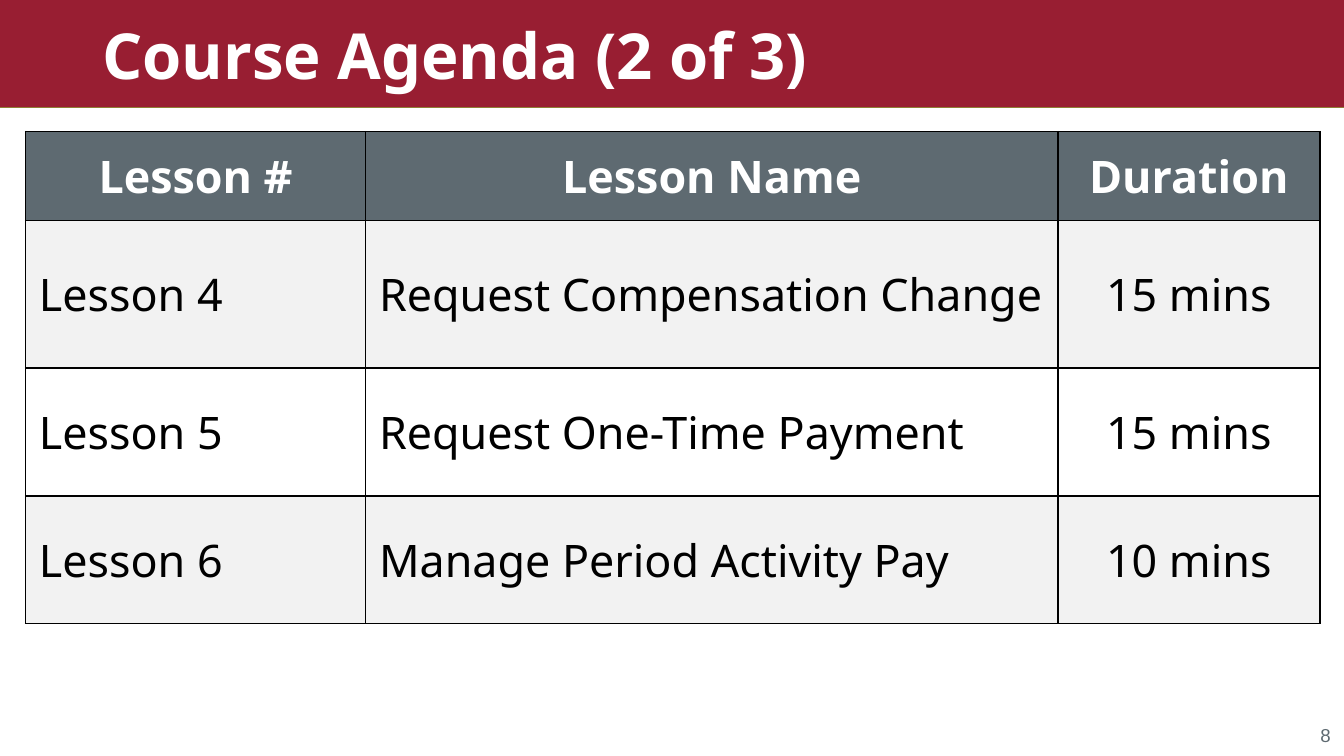
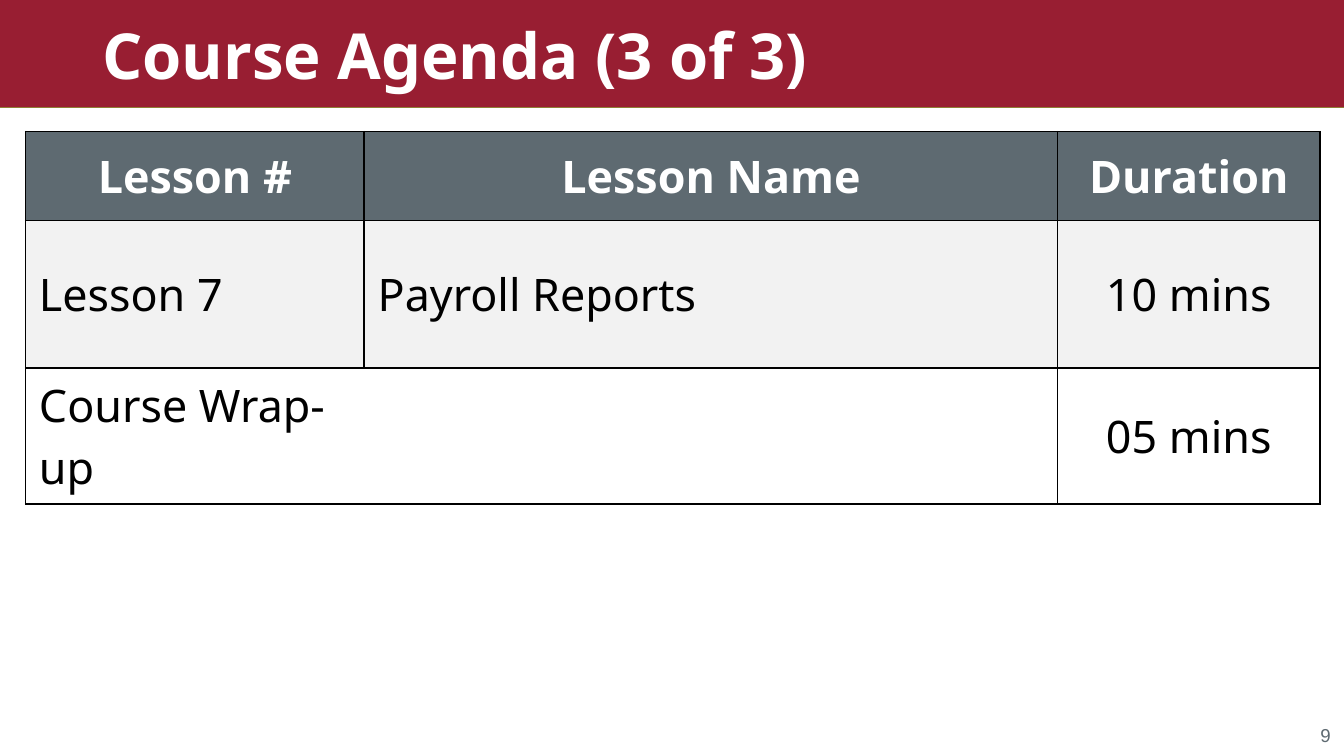
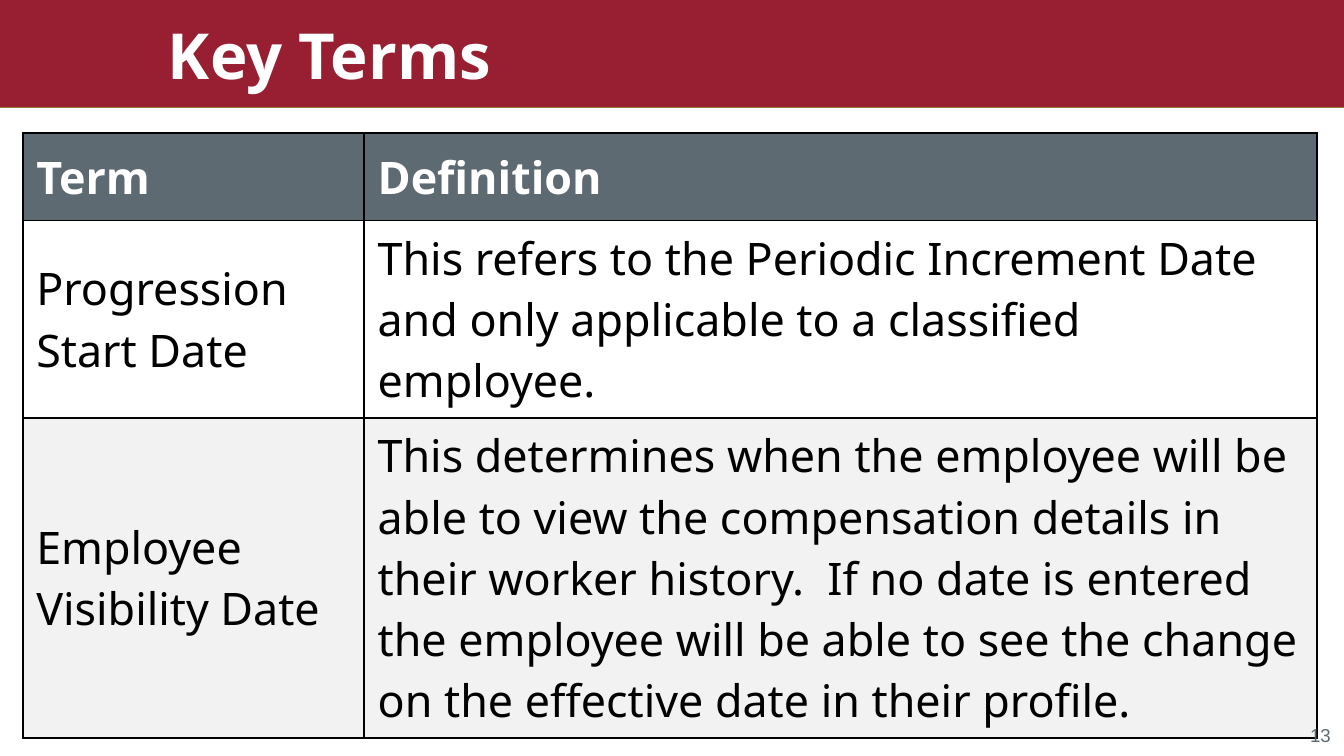
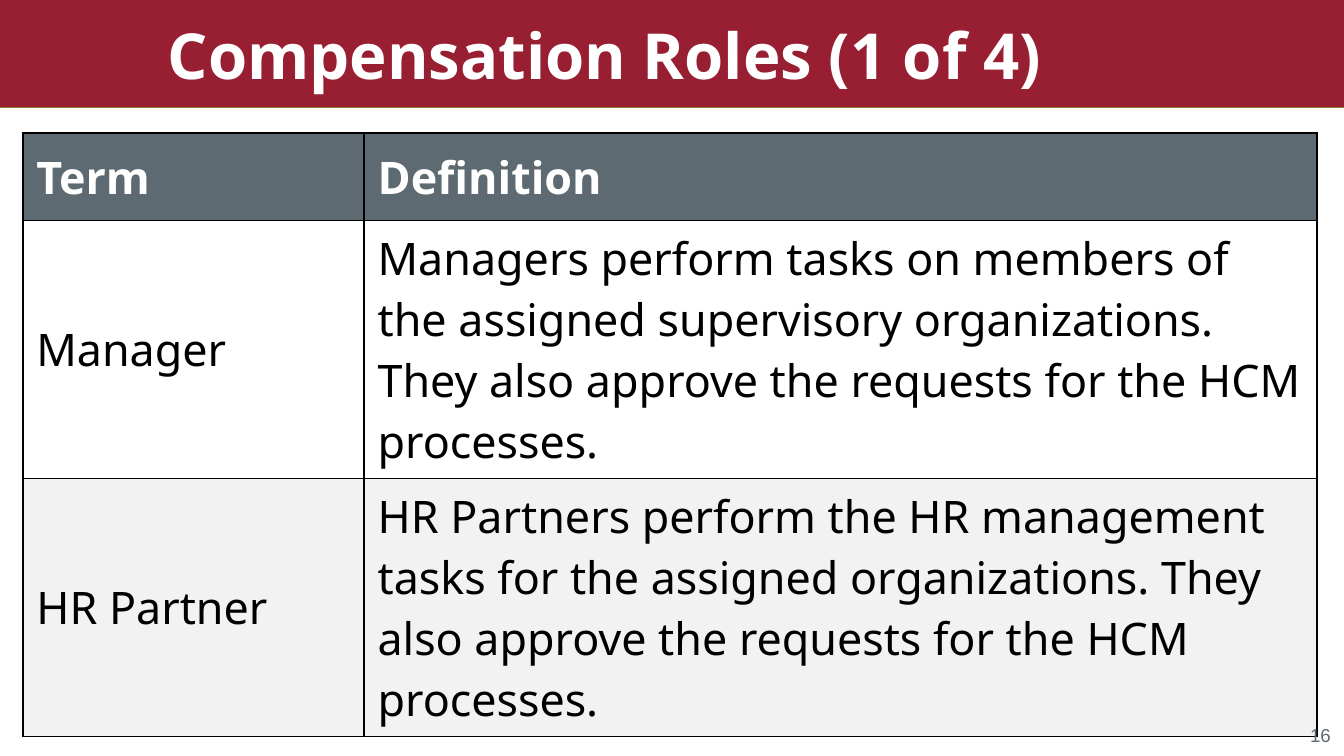
from lxml import etree
from pptx import Presentation
from pptx.dml.color import RGBColor
from pptx.enum.shapes import MSO_CONNECTOR, MSO_SHAPE
from pptx.enum.text import MSO_ANCHOR, PP_ALIGN
from pptx.oxml.ns import qn
from pptx.util import Inches, Pt

RECTANGLE = MSO_SHAPE.RECTANGLE
STRAIGHT = MSO_CONNECTOR.STRAIGHT
MIDDLE, BOTTOM = MSO_ANCHOR.MIDDLE, MSO_ANCHOR.BOTTOM
LEFT, CENTER, RIGHT = PP_ALIGN.LEFT, PP_ALIGN.CENTER, PP_ALIGN.RIGHT

# Shared colours and fonts
CRIMSON = RGBColor(0x98, 0x1E, 0x32)
GOLD = RGBColor(0x8F, 0x7E, 0x35)
SLATE = RGBColor(0x5E, 0x6A, 0x71)
LIGHT_GRAY = RGBColor(0xF2, 0xF2, 0xF2)
WHITE = RGBColor(0xFF, 0xFF, 0xFF)
BLACK = RGBColor(0x00, 0x00, 0x00)
MAIN_FONT = "Noto Sans"
NUMBER_FONT = "Arial"

# Shared sizes, on a 16:9 slide
WIDTH = Inches(10)
HEIGHT = WIDTH * 9 // 16
BAND_HEIGHT = Inches(0.8)
TITLE_TOP, TITLE_HEIGHT, TITLE_INSET = Inches(0.13), Inches(0.62), Inches(0.5)
NUMBER_WIDTH, NUMBER_HEIGHT, NUMBER_TOP = Inches(1.36), Inches(0.39), Inches(5.21)

# Table kinds: title place, table place, column alignment, body row fills
AGENDA = {
    "title": (0.26, 9.67), "table": (0.19, 0.98),
    "header_align": [CENTER, CENTER, CENTER], "body_align": [LEFT, LEFT, CENTER],
    "bands": [LIGHT_GRAY, WHITE], "header": ["Lesson #", "Lesson Name", "Duration"],
}
TERMS = {
    "title": (0.75, 9.06), "table": (0.17, 0.99),
    "header_align": [LEFT, LEFT], "body_align": [LEFT, LEFT],
    "bands": [WHITE, LIGHT_GRAY], "header": ["Term", "Definition"],
}

# Slides: kind, title, number, column widths, row heights, body rows
SLIDES = [
    (AGENDA, "Course Agenda (2 of 3)", "8", [2.53, 5.15, 1.95], [0.66, 1.1, 0.95, 0.95], [
        ["Lesson 4", "Request Compensation Change", "15 mins"],
        ["Lesson 5", "Request One-Time Payment", "15 mins"],
        ["Lesson 6", "Manage Period Activity Pay", "10 mins"],
    ]),
    (AGENDA, "Course Agenda (3 of 3)", "9", [2.52, 5.16, 1.95], [0.66, 1.1, 1.01], [
        ["Lesson 7", "Payroll Reports", "10 mins"],
        ["Course Wrap-up", "", "05 mins"],
    ]),
    (TERMS, "Key Terms", "13", [2.54, 7.09], [0.65, 1.47, 2.38], [
        ["Progression Start Date",
         "This refers to the Periodic Increment Date and only applicable to a "
         "classified employee."],
        ["Employee Visibility Date",
         "This determines when the employee will be able to view the compensation "
         "details in their worker history.  If no date is entered the employee will "
         "be able to see the change on the effective date in their profile."],
    ]),
    (TERMS, "Compensation Roles (1 of 4)", "16", [2.54, 7.09], [0.65, 1.92, 1.92], [
        ["Manager",
         "Managers perform tasks on members of the assigned supervisory "
         "organizations. They also approve the requests for the HCM processes."],
        ["HR Partner",
         "HR Partners perform the HR management tasks for the assigned "
         "organizations. They also approve the requests for the HCM processes."],
    ]),
]


def write_text(text_frame, text, size, color, align=LEFT, bold=False, font=MAIN_FONT):
    paragraph = text_frame.paragraphs[0]
    paragraph.alignment = align
    run = paragraph.add_run()
    run.text = text
    run.font.name = font
    run.font.size = Pt(size)
    run.font.bold = bold
    run.font.color.rgb = color
    return paragraph


def set_borders(cell, open_sides):
    properties = cell._tc.get_or_add_tcPr()
    for position, side in enumerate(["lnL", "lnR", "lnT", "lnB"]):
        line = etree.Element(qn("a:" + side), w=str(Pt(1)))
        if side in open_sides:
            etree.SubElement(line, qn("a:noFill"))
        else:
            fill = etree.SubElement(line, qn("a:solidFill"))
            etree.SubElement(fill, qn("a:srgbClr"), val=str(BLACK))
        properties.insert(position, line)


presentation = Presentation()
presentation.slide_width, presentation.slide_height = WIDTH, HEIGHT
blank_layout = presentation.slide_layouts[6]

for kind, title, number, column_widths, row_heights, body in SLIDES:
    slide = presentation.slides.add_slide(blank_layout)
    shapes = slide.shapes

    # Title band with its rule
    band = shapes.add_shape(RECTANGLE, 0, 0, WIDTH, BAND_HEIGHT)
    band.shadow.inherit = False
    band.fill.solid()
    band.fill.fore_color.rgb = CRIMSON
    band.line.fill.background()
    rule = shapes.add_connector(STRAIGHT, 0, BAND_HEIGHT, WIDTH, BAND_HEIGHT)
    rule.line.color.rgb = GOLD
    rule.line.width = Pt(1)
    etree.SubElement(rule._element.spPr, qn("a:effectLst"))

    # Title
    title_left, title_width = kind["title"]
    title_box = shapes.add_textbox(Inches(title_left), TITLE_TOP, Inches(title_width), TITLE_HEIGHT)
    title_frame = title_box.text_frame
    title_frame.word_wrap = True
    title_frame.vertical_anchor = MIDDLE
    title_frame.margin_left = title_frame.margin_right = TITLE_INSET
    write_text(title_frame, title, 34, WHITE, bold=True).line_spacing = 0.9

    # Table
    table_left, table_top = kind["table"]
    rows = [kind["header"]] + body
    table = shapes.add_table(
        len(rows), len(column_widths), Inches(table_left), Inches(table_top),
        Inches(sum(column_widths)), Inches(sum(row_heights))).table
    table.horz_banding = False
    for column, width in zip(table.columns, column_widths):
        column.width = Inches(width)
    for row, height in zip(table.rows, row_heights):
        row.height = Inches(height)

    for row_index, texts in enumerate(rows):
        is_header = row_index == 0
        fill_color = SLATE if is_header else kind["bands"][(row_index - 1) % 2]
        alignments = kind["header_align"] if is_header else kind["body_align"]
        for column_index, text in enumerate(texts):
            cell = table.cell(row_index, column_index)
            cell.vertical_anchor = MIDDLE
            cell.fill.solid()
            cell.fill.fore_color.rgb = fill_color
            if text:
                write_text(cell.text_frame, text, 24, WHITE if is_header else BLACK,
                           alignments[column_index], is_header)
            # An empty cell shares an open side with its left neighbour
            open_sides = [] if text else ["lnL"]
            if column_index + 1 < len(texts) and not texts[column_index + 1]:
                open_sides.append("lnR")
            set_borders(cell, open_sides)

    # Slide number
    number_box = shapes.add_textbox(WIDTH - NUMBER_WIDTH, NUMBER_TOP, NUMBER_WIDTH, NUMBER_HEIGHT)
    number_box.text_frame.word_wrap = True
    number_box.text_frame.vertical_anchor = BOTTOM
    write_text(number_box.text_frame, number, 10, SLATE, RIGHT, font=NUMBER_FONT)

presentation.save("out.pptx")
